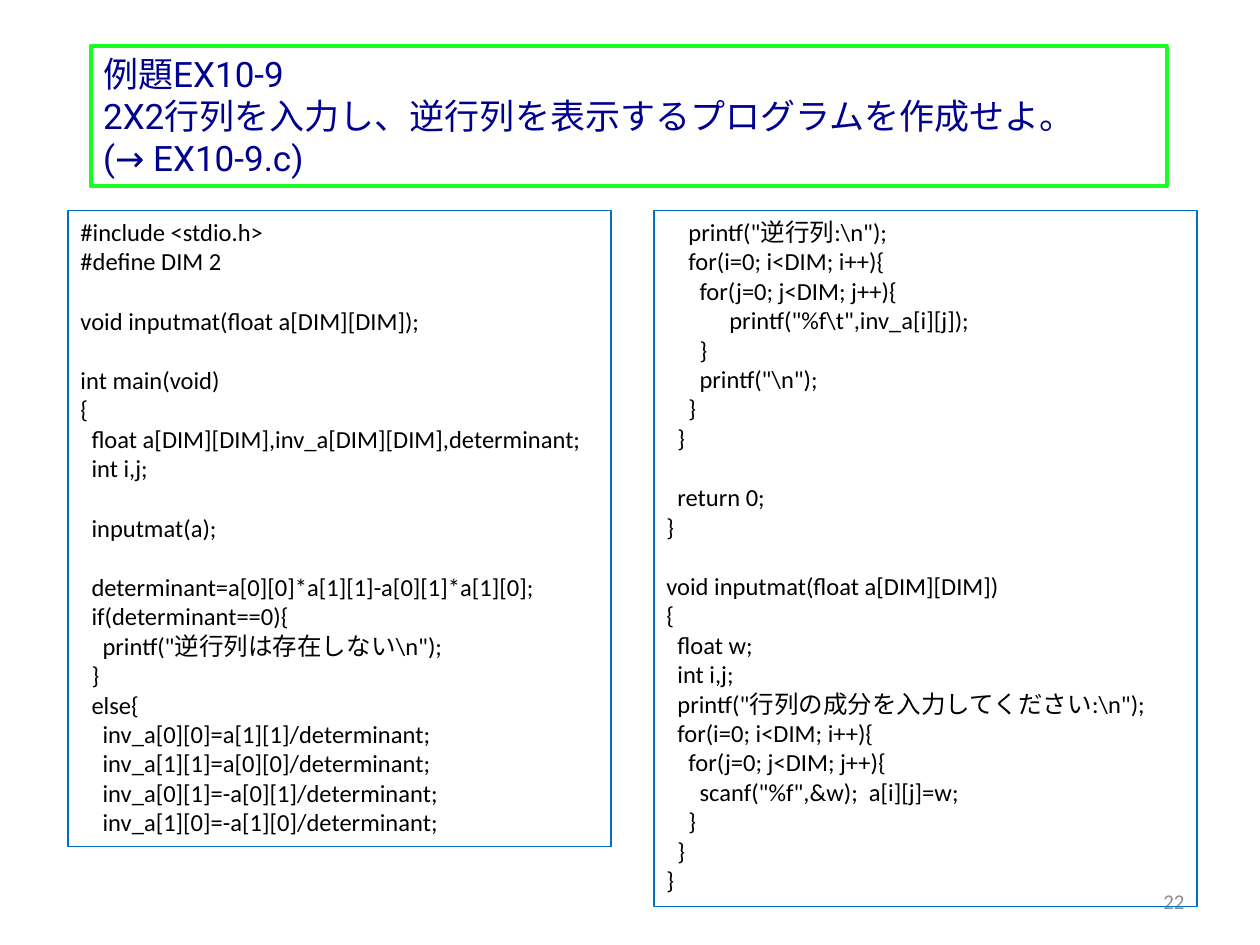
"""Build the slide for example EX10-9, a C program that inverts a 2X2 matrix."""
from pptx import Presentation
from pptx.dml.color import RGBColor
from pptx.enum.shapes import MSO_SHAPE
from pptx.enum.text import MSO_ANCHOR, MSO_AUTO_SIZE, PP_ALIGN
from pptx.util import Inches, Pt

GREEN = RGBColor(0x19, 0xFF, 0x25)
NAVY = RGBColor(0x00, 0x00, 0x90)
BLUE = RGBColor(0x00, 0x70, 0xC0)
BLACK = RGBColor(0x00, 0x00, 0x00)
GRAY = RGBColor(0x8C, 0x8C, 0x8C)
SPACE_WIDTH = Pt(3.16)
CODE_LINE = 17.1

TITLE = """例題EX10-9
2X2行列を入力し、逆行列を表示するプログラムを作成せよ。
(→ EX10-9.c)"""

LEFT_CODE = """#include <stdio.h>
#define DIM 2

void inputmat(float a[DIM][DIM]);

int main(void)
{
  float a[DIM][DIM],inv_a[DIM][DIM],determinant;
  int i,j;

  inputmat(a);

  determinant=a[0][0]*a[1][1]-a[0][1]*a[1][0];
  if(determinant==0){
    printf("逆行列は存在しない\\n");
  }
  else{
    inv_a[0][0]=a[1][1]/determinant;
    inv_a[1][1]=a[0][0]/determinant;
    inv_a[0][1]=-a[0][1]/determinant;
    inv_a[1][0]=-a[1][0]/determinant;"""

RIGHT_CODE = """    printf("逆行列:\\n");
    for(i=0; i<DIM; i++){
      for(j=0; j<DIM; j++){
\tprintf("%f\\t",inv_a[i][j]);
      }
      printf("\\n");
    }
  }

  return 0;
}

void inputmat(float a[DIM][DIM])
{
  float w;
  int i,j;
  printf("行列の成分を入力してください:\\n");
  for(i=0; i<DIM; i++){
    for(j=0; j<DIM; j++){
      scanf("%f",&w);  a[i][j]=w;
    }
  }
}"""

prs = Presentation()
prs.slide_width, prs.slide_height = Inches(10), Inches(7.5)
W, H = prs.slide_width, prs.slide_height
s = prs.slides.add_slide(prs.slide_layouts[6])


def set_font(r, name, size, color):
    for key, value in {"name": name, "size": Pt(size)}.items():
        setattr(r.font, key, value)
    r.font.color.rgb = color


sp = s.shapes.add_textbox(int(W * 0.717), int(H * 0.927), int(W * 0.233), int(H * 0.053))
tf = sp.text_frame
tf.word_wrap = True
tf.vertical_anchor = MSO_ANCHOR.MIDDLE
p = tf.paragraphs[0]
p.alignment = PP_ALIGN.RIGHT
r = p.add_run()
r.text = "22"
set_font(r, "Calibri", 12, GRAY)

boxes = [
    (0.072, 0.049, 0.854, 0.148, GREEN, 2.25, TITLE, "Roboto", 20, NAVY),
    (0.054, 0.223, 0.431, 0.673, BLUE, 0.75, LEFT_CODE, "Calibri", 14, BLACK),
    (0.519, 0.223, 0.431, 0.736, BLUE, 0.75, RIGHT_CODE, "Calibri", 14, BLACK),
]
for x, y, w, h, edge, weight, text, font, size, color in boxes:
    sp = s.shapes.add_shape(MSO_SHAPE.RECTANGLE, int(W * x), int(H * y), int(W * w), int(H * h))
    sp.shadow.inherit = False
    sp.fill.background()
    sp.line.color.rgb = edge
    sp.line.width = Pt(weight)
    tf = sp.text_frame
    frame = {"word_wrap": True, "vertical_anchor": MSO_ANCHOR.TOP, "auto_size": MSO_AUTO_SIZE.SHAPE_TO_FIT_TEXT}
    for key, value in frame.items():
        setattr(tf, key, value)
    p, gap = tf.paragraphs[0], 0
    for i, line in enumerate(text.split("\n")):
        if not line:
            gap = CODE_LINE
            continue
        if i:
            p = tf.add_paragraph()
        p.alignment = PP_ALIGN.LEFT
        p.space_before = Pt(gap)
        gap = 0
        code = line.lstrip(" ")
        indent = (len(line) - len(code)) * SPACE_WIDTH
        p._p.get_or_add_pPr().set("marL", str(indent))
        r = p.add_run()
        r.text = code
        set_font(r, font, size, color)

prs.save("out.pptx")
